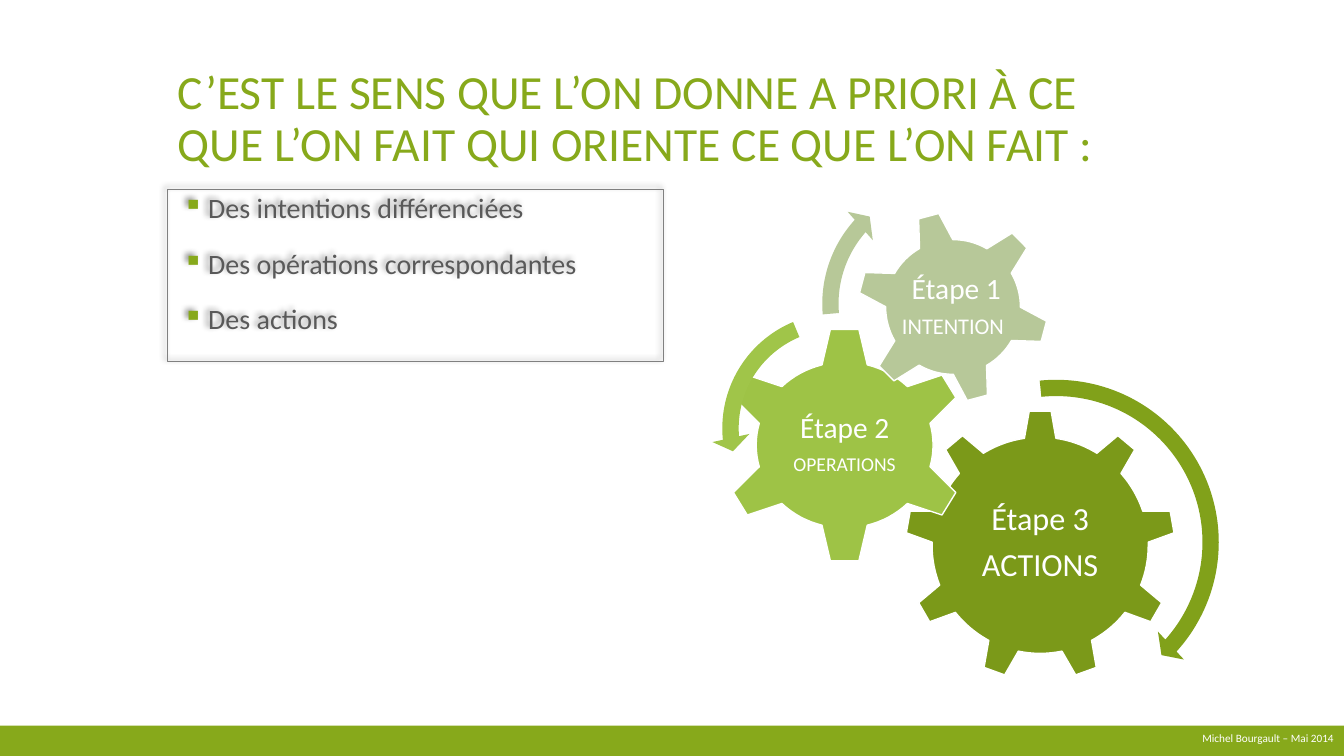
from collections import namedtuple
from dataclasses import dataclass

from lxml.etree import SubElement
from pptx import Presentation
from pptx.dml.color import RGBColor
from pptx.enum.shapes import MSO_SHAPE
from pptx.enum.text import MSO_ANCHOR, PP_ALIGN
from pptx.oxml.ns import qn
from pptx.util import Pt

Box = namedtuple("Box", "left top width height")
Gear = namedtuple("Gear", "preset box turn color inset_x inset_y label_height lines")
Arrow = namedtuple("Arrow", "preset box color adjustments")


@dataclass(frozen=True)
class Theme:
    font: str = "Calibri"
    green: str = "87A91B"
    body_text: str = "595959"
    frame: str = "808080"
    white: str = "FFFFFF"
    intention: str = "B7C899"
    operations: str = "9EC346"
    actions: str = "7B9919"
    intention_arrow: str = "B7C898"
    operations_arrow: str = "A0C549"
    actions_arrow: str = "81A11A"
    title_size: int = 34
    body_size: int = 20
    footer_size: int = 8


THEME = Theme()
PAGE = Box(0, 0, 960, 540)

# Gear and arrow boxes are relative to the cluster's top left corner.
GEARS = [
    Gear(MSO_SHAPE.GEAR_9, Box(138.5, 173, 193, 193), 0, THEME.actions,
         39, 45.4, 99.4, [("Étape\u00a03", 23), ("ACTIONS", 23)]),
    Gear(MSO_SHAPE.GEAR_6, Box(6.8, 113.3, 177.1, 169.2), 0, THEME.operations,
         43.9, 42.5, 83.5, [("Étape\u00a02", 21), ("OPERATIONS", 14)]),
    Gear(MSO_SHAPE.GEAR_6, Box(104, 30.5, 137.5, 137.5), 345, THEME.intention,
         30.2, 30.2, 77.1, [(" Étape\u00a01", 21), ("INTENTION", 16)]),
]
ARROWS = [
    Arrow(MSO_SHAPE.CIRCULAR_ARROW, Box(122.7, 143.5, 247.7, 247.7),
          THEME.actions_arrow, (0.047, 2.99, 25.222, 158.482, 0.055)),
    Arrow(MSO_SHAPE.LEFT_CIRCULAR_ARROW, Box(0.3, 96, 180, 180),
          THEME.operations_arrow, (0.065, 4.3, 104.891, 148.378, 0.075)),
    Arrow(MSO_SHAPE.CIRCULAR_ARROW, Box(71.6, 0.2, 193.7, 193.7),
          THEME.intention_arrow, (0.06, 3.941, 133.138, 105.082, 0.07)),
]


def color_of(code):
    return RGBColor.from_string(code)


def inside(outer, inner):
    """Move a relative box to its place on the page."""
    return inner._replace(left=outer.left + inner.left, top=outer.top + inner.top)


def add_outline(shapes, preset, box, fill=None, line=None, line_width=1):
    shape = shapes.add_shape(preset, *map(Pt, box))
    shape.shadow.inherit = False
    if fill:
        shape.fill.solid()
        shape.fill.fore_color.rgb = color_of(fill)
    else:
        shape.fill.background()
    if line:
        shape.line.color.rgb = color_of(line)
        shape.line.width = Pt(line_width)
    else:
        shape.line.fill.background()
    return shape


def add_lines(frame, lines, color, align, spacing=0.9):
    """Write (text, size) lines as paragraphs and return the paragraphs."""
    frame.word_wrap = True
    for index, (text, size) in enumerate(lines):
        para = frame.add_paragraph() if index else frame.paragraphs[0]
        para.alignment = align
        para.line_spacing = spacing
        span = para.add_run()
        span.text = text
        span.font.name = THEME.font
        span.font.size = Pt(size)
        span.font.color.rgb = color_of(color)
    return frame.paragraphs


def add_label(shapes, box, lines, color, align, anchor, spacing=0.9, margin=None):
    frame = shapes.add_textbox(*map(Pt, box)).text_frame
    frame.vertical_anchor = anchor
    if margin is not None:
        frame.margin_left = frame.margin_right = Pt(margin)
        frame.margin_top = frame.margin_bottom = Pt(margin)
    return add_lines(frame, lines, color, align, spacing)


def add_shadow(shape):
    effects = shape._element.spPr.find(qn("a:effectLst"))
    shadow = SubElement(effects, qn("a:outerShdw"), blurRad=str(Pt(4)),
                        dist=str(Pt(3)), dir=str(225 * 60000), rotWithShape="0")
    shade = SubElement(shadow, qn("a:srgbClr"), val="000000")
    SubElement(shade, qn("a:alpha"), val="40000")


def add_bullet(para):
    properties = para._p.get_or_add_pPr()
    properties.set("marL", str(Pt(21.6)))
    properties.set("indent", str(Pt(-18)))
    tint = SubElement(properties, qn("a:buClr"))
    SubElement(tint, qn("a:srgbClr"), val=THEME.green)
    SubElement(properties, qn("a:buChar"), char="▪")


def draw_title(page, box):
    text = ("C’EST LE SENS QUE L’ON DONNE A PRIORI À CE "
            "QUE L’ON FAIT QUI ORIENTE CE QUE L’ON FAIT :")
    add_label(page.shapes, box, [(text, THEME.title_size)], THEME.green,
              PP_ALIGN.LEFT, MSO_ANCHOR.BOTTOM)


def draw_points(page, box):
    panel = add_outline(page.shapes, MSO_SHAPE.RECTANGLE, box,
                        line=THEME.frame, line_width=0.75)
    add_shadow(panel)
    panel.text_frame.vertical_anchor = MSO_ANCHOR.TOP
    points = ["Des intentions différenciées", "Des opérations correspondantes",
              "Des actions"]
    lines = [(point, THEME.body_size) for point in points]
    for para in add_lines(panel.text_frame, lines, THEME.body_text, PP_ALIGN.LEFT):
        para.space_before = Pt(18)
        add_bullet(para)


def draw_gear(shapes, cluster, gear):
    box = inside(cluster, gear.box)
    wheel = add_outline(shapes, gear.preset, box, gear.color, THEME.white)
    wheel.rotation = gear.turn
    label = Box(gear.inset_x, gear.inset_y,
                box.width - 2 * gear.inset_x, gear.label_height)
    paras = add_label(shapes, inside(box, label), gear.lines, THEME.white,
                      PP_ALIGN.CENTER, MSO_ANCHOR.MIDDLE, margin=2)
    for para, (_, size) in zip(paras, gear.lines):
        para.space_after = Pt(round(0.35 * size))


def draw_gear_cluster(page, box):
    shapes = page.shapes.add_group_shape().shapes
    for gear in GEARS:
        draw_gear(shapes, box, gear)
    for arrow in ARROWS:
        shape = add_outline(shapes, arrow.preset, inside(box, arrow.box), arrow.color)
        for index, value in enumerate(arrow.adjustments):
            shape.adjustments[index] = value


def draw_footer_band(page, box):
    add_outline(page.shapes, MSO_SHAPE.RECTANGLE, box, THEME.green)


def draw_credit(page, box):
    add_label(page.shapes, box, [("Michel Bourgault – Mai 2014", THEME.footer_size)],
              THEME.white, PP_ALIGN.RIGHT, MSO_ANCHOR.MIDDLE, spacing=1.0)


def main():
    deck = Presentation()
    deck.slide_width, deck.slide_height = Pt(PAGE.width), Pt(PAGE.height)
    page = deck.slides.add_slide(deck.slide_layouts[6])
    draw_footer_band(page, Box(0, 518.4, PAGE.width, 21.6))
    draw_title(page, Box(120, 36, 720, 90))
    draw_points(page, Box(120, 135.4, 354, 123))
    draw_gear_cluster(page, Box(508, 120, 371, 392))
    draw_credit(page, Box(448.8, 519.8, 511.2, 14.4))
    deck.save("out.pptx")


if __name__ == "__main__":
    main()
